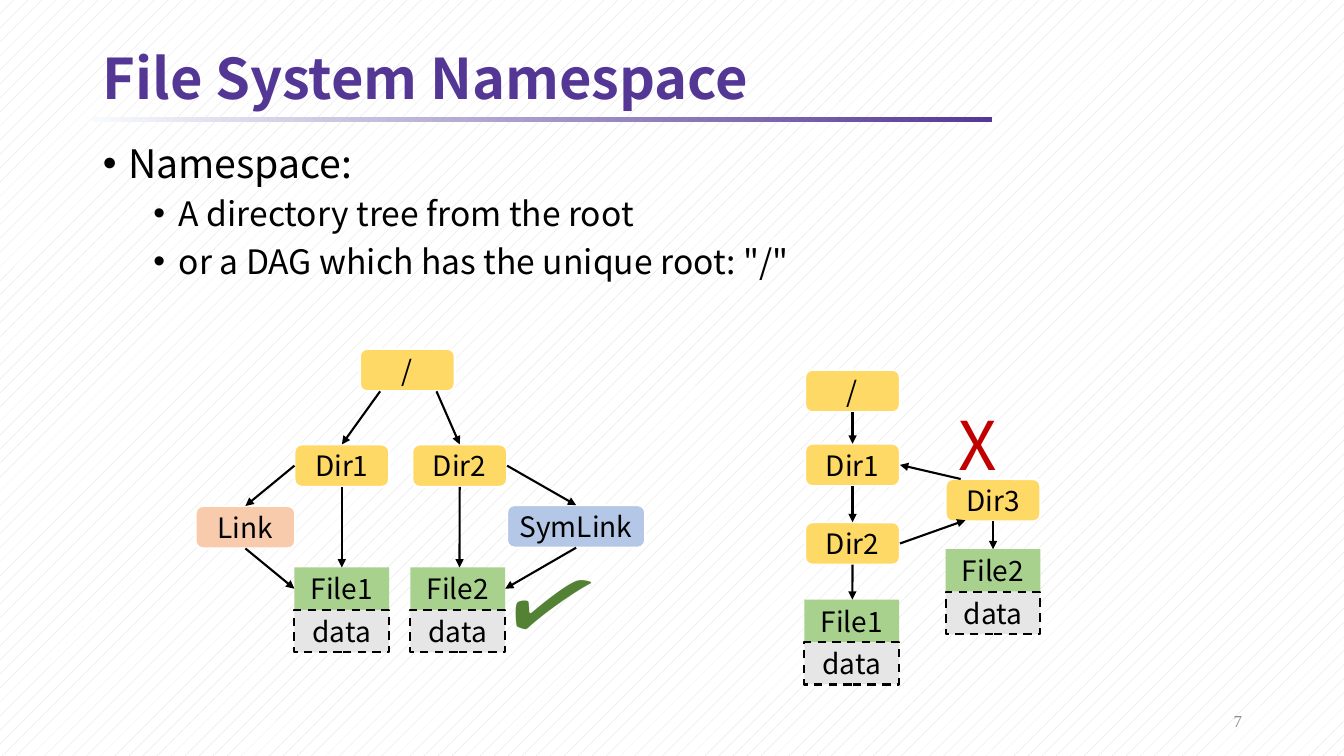
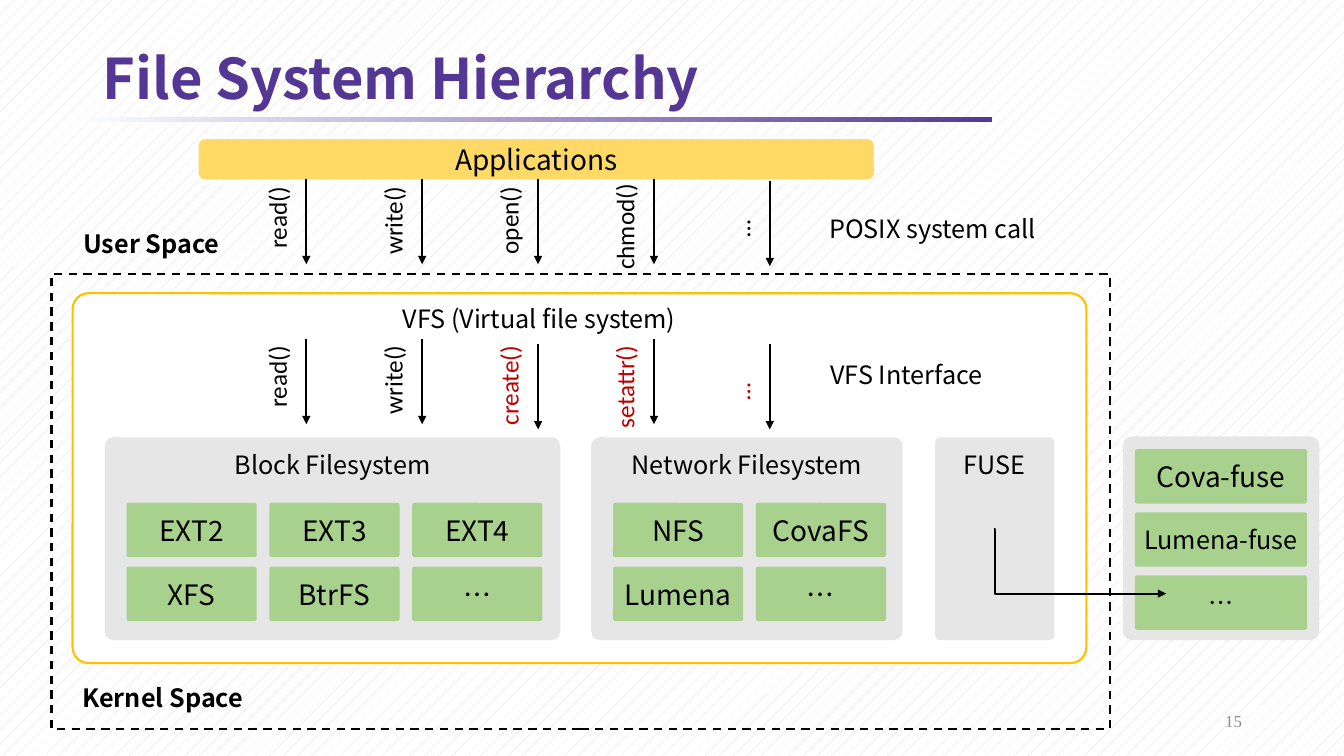
from dataclasses import dataclass
from typing import NamedTuple

from lxml.etree import SubElement
from pptx import Presentation
from pptx.dml.color import RGBColor
from pptx.enum.dml import MSO_LINE, MSO_PATTERN
from pptx.enum.shapes import MSO_CONNECTOR as LINK, MSO_SHAPE as SHAPE
from pptx.enum.text import MSO_ANCHOR as ANCHOR, MSO_AUTO_SIZE as FIT, PP_ALIGN as ALIGN
from pptx.oxml.ns import qn
from pptx.util import Cm, Pt

COLOURS = {
    "black": "000000", "white": "FFFFFF", "purple": "543795", "mist": "F7FAFD",
    "hatch": "D9D9D9", "number": "8C8C8C", "yellow": "FFD966", "amber": "FFC000",
    "blue": "B4C7E7", "peach": "F8CBAD", "green": "A9D18E", "grey": "E7E6E6",
    "red": "C00000", "check": "548235",
}
SANS, CODE, SERIF = "Noto Sans CJK SC", "Calibri", "Times New Roman"
TOP, LEFT, BOTTOM, RIGHT = range(4)
LINE_WIDTH = Pt(1.5)
PANEL_ROUNDING = 0.043
NODE_WIDTH, NODE_HEIGHT = 2.39, 1.07


class Box(NamedTuple):
    """A place on the page, in centimetres."""
    left: float
    top: float
    width: float
    height: float

    def lengths(self):
        return [Cm(value) for value in self]


class Style(NamedTuple):
    size: float = 18
    colour: str = "black"
    font: str = SANS
    bold: bool = False
    align: ALIGN = ALIGN.LEFT


class Spot(NamedTuple):
    x: float
    y: float


class Joint(NamedTuple):
    node: str
    side: int


class Edge(NamedTuple):
    start: Joint | Spot
    end: Joint | Spot


@dataclass
class Node:
    key: str
    text: str
    left: float
    top: float
    width: float = NODE_WIDTH
    fill: str = "yellow"


@dataclass
class Call:
    text: str
    middle: float
    arrow_top: float
    colour: str = "black"


@dataclass
class Panel:
    box: Box
    title: str
    cells: list[str]
    columns: int = 1
    cell_width: float = 3.28
    inset: Spot = Spot(0.55, 1.65)
    row_pitch: float = 1.61
    sizes: tuple[int, ...] = ()


CENTRED = Style(20, align=ALIGN.CENTER)
TREE_NODES = [
    Node("root", "/", 9.07, 8.79),
    Node("dir1", "Dir1", 7.42, 11.2),
    Node("dir2", "Dir2", 10.39, 11.2),
    Node("symlink", "SymLink", 12.78, 12.73, 3.48, "blue"),
    Node("link", "Link", 4.93, 12.75, 2.51, "peach"),
    Node("cycle root", "/", 20.29, 9.32),
    Node("cycle dir1", "Dir1", 20.29, 11.18),
    Node("cycle dir2", "Dir2", 20.29, 13.16),
    Node("cycle dir3", "Dir3", 23.83, 12.07),
]
FILE_NODES = [
    Node("file1", "File1", 7.42, 14.3, fill="green"),
    Node("file2", "File2", 10.34, 14.3, fill="green"),
    Node("cycle file1", "File1", 20.27, 15.11, fill="green"),
    Node("cycle file2", "File2", 23.83, 13.84, fill="green"),
]
EDGES = [
    Edge(Spot(9.58, 9.86), Joint("dir1", TOP)),
    Edge(Spot(11, 9.86), Joint("dir2", TOP)),
    Edge(Joint("dir1", LEFT), Joint("link", TOP)),
    Edge(Joint("dir1", BOTTOM), Joint("file1", TOP)),
    Edge(Joint("link", BOTTOM), Joint("file1", LEFT)),
    Edge(Joint("dir2", BOTTOM), Spot(11.58, 14.3)),
    Edge(Joint("dir2", RIGHT), Joint("symlink", TOP)),
    Edge(Joint("symlink", BOTTOM), Joint("file2", RIGHT)),
    Edge(Joint("cycle root", BOTTOM), Joint("cycle dir1", TOP)),
    Edge(Joint("cycle dir1", BOTTOM), Joint("cycle dir2", TOP)),
    Edge(Joint("cycle dir2", BOTTOM), Spot(21.48, 15.11)),
    Edge(Joint("cycle dir2", RIGHT), Spot(24.33, 13.11)),
    Edge(Spot(24.21, 12.07), Joint("cycle dir1", RIGHT)),
    Edge(Joint("cycle dir3", BOTTOM), Joint("cycle file2", TOP)),
]
POSIX_CALLS = [
    Call("read()", 5.49, 4.5), Call("write()", 5.56, 4.5), Call("open()", 5.56, 4.5),
    Call("chmod()", 5.72, 4.5), Call("…", 5.77, 4.55),
]
VFS_CALLS = [
    Call("read()", 9.5, 8.53), Call("write()", 9.57, 8.53),
    Call("create()", 9.72, 8.66, "red"), Call("setattr()", 9.75, 8.53, "red"),
    Call("…", 9.86, 8.66, "red"),
]
KERNEL_PANELS = [
    Panel(Box(2.64, 11.02, 11.48, 5.11), "Block Filesystem",
          ["EXT2", "EXT3", "EXT4", "XFS", "BtrFS", "…"], columns=3),
    Panel(Box(14.9, 11.02, 7.85, 5.11), "Network Filesystem",
          ["NFS", "CovaFS", "Lumena", "…"], columns=2),
    Panel(Box(23.57, 11.02, 3, 5.11), "FUSE", []),
]
USER_PANEL = Panel(Box(28.3, 11, 4.95, 5.13), "", ["Cova-fuse", "Lumena-fuse", "…"],
                   cell_width=4.34, inset=Spot(0.3, 0.32), row_pitch=1.59, sizes=(20, 18, 18))


def rgb(name: str) -> RGBColor:
    return RGBColor.from_string(COLOURS[name])


def write(para, text: str, style: Style) -> None:
    para.alignment = style.align
    span = para.add_run()
    span.text = text
    span.font.name, span.font.size, span.font.bold = style.font, Pt(style.size), style.bold
    span.font.color.rgb = rgb(style.colour)


def add_label(page, box: Box, text: str, style: Style = Style(), wrap=False, turn=0.0):
    label = page.shapes.add_textbox(*box.lengths())
    label.text_frame.word_wrap = wrap
    label.rotation = turn
    write(label.text_frame.paragraphs[0], text, style)
    return label


def add_block(page, box: Box, fill: str = "", line: str = "", text: str = "", rounding=0.0,
              dashed=False, style: Style = CENTRED):
    """Draw a rectangle, rounded on request; an empty fill or line is left out."""
    kind = SHAPE.ROUNDED_RECTANGLE if rounding else SHAPE.RECTANGLE
    block = page.shapes.add_shape(kind, *box.lengths())
    block.shadow.inherit = False
    if rounding:
        block.adjustments[0] = rounding
    if fill:
        block.fill.solid()
        block.fill.fore_color.rgb = rgb(fill)
    else:
        block.fill.background()
    if line:
        block.line.color.rgb = rgb(line)
        block.line.width = LINE_WIDTH
        if dashed:
            block.line.dash_style = MSO_LINE.DASH
    else:
        block.line.fill.background()
    if text:
        frame = block.text_frame
        frame.vertical_anchor = ANCHOR.MIDDLE
        frame.margin_left = frame.margin_right = 0
        write(frame.paragraphs[0], text, style)
    return block


def add_arrow(page, start: Spot, end: Spot, kind=LINK.STRAIGHT):
    arrow = page.shapes.add_connector(kind, *(Cm(value) for value in (*start, *end)))
    arrow.line.color.rgb = rgb("black")
    arrow.line.width = LINE_WIDTH
    properties = arrow.element.spPr
    SubElement(properties.find(qn("a:ln")), qn("a:tailEnd"), type="triangle")
    SubElement(properties, qn("a:effectLst"))
    return arrow


def add_edge(page, edge: Edge, blocks: dict) -> None:
    start, end = (Spot(0, 0) if isinstance(tip, Joint) else tip for tip in edge)
    arrow = add_arrow(page, start, end)
    for tip, connect in zip(edge, (arrow.begin_connect, arrow.end_connect)):
        if isinstance(tip, Joint):
            connect(blocks[tip.node], tip.side)


def place(holder, box: Box) -> None:
    holder.left, holder.top, holder.width, holder.height = box.lengths()


def start_page(deck, layout: int, title: str, number: int):
    """Add a page with the title, the band under it and the page number."""
    page = deck.slides.add_slide(deck.slide_layouts[layout])
    heading = page.shapes.title
    place(heading, Box(2.34, 1.09, 29.21, 1.91))
    heading.text_frame.vertical_anchor = ANCHOR.MIDDLE
    heading.text_frame.auto_size = FIT.NONE
    para = heading.text_frame.paragraphs[0]
    para.line_spacing = 0.9
    write(para, title, Style(40, "purple", bold=True))

    band = add_block(page, Box(2.34, 2.95, 22.66, 0.13), "purple")
    band.fill.gradient()
    band.fill.gradient_angle = 0
    for stop, colour in zip(band.fill.gradient_stops, ("mist", "purple")):
        stop.color.rgb = rgb(colour)

    footer = add_label(page, Box(23.93, 17.65, 7.62, 1.02), str(number),
                       Style(12, "number", SERIF, align=ALIGN.RIGHT), wrap=True)
    footer.text_frame.vertical_anchor = ANCHOR.MIDDLE
    return page


def add_bullet(para, text: str, level: int) -> None:
    para.level = level
    para.line_spacing = 1.0
    para.space_before = Pt(5 if level else 10)
    write(para, text, Style(24 if level else 28))
    properties = para._p.get_or_add_pPr()
    properties.set("marL", str(Cm(0.64 + 1.27 * level)))
    properties.set("indent", str(Cm(-0.64)))
    SubElement(properties, qn("a:buFont"), typeface="Arial")
    SubElement(properties, qn("a:buChar"), char="•")


def build_namespace(deck) -> None:
    page = start_page(deck, 1, "File System Namespace", 7)
    body = page.placeholders[1]
    place(body, Box(2.34, 3.38, 29.21, 13.79))
    frame = body.text_frame
    frame.auto_size = FIT.NONE
    bullets = [("Namespace:", 0), ("A directory tree from the root", 1),
               ('or a DAG which has the unique root: "/"', 1)]
    for index, (text, level) in enumerate(bullets):
        add_bullet(frame.add_paragraph() if index else frame.paragraphs[0], text, level)

    blocks = {}
    for node in TREE_NODES:
        box = Box(node.left, node.top, node.width, NODE_HEIGHT)
        blocks[node.key] = add_block(page, box, node.fill, "white", node.text, rounding=0.17)
    for node in FILE_NODES:
        box = Box(node.left, node.top, node.width, NODE_HEIGHT)
        blocks[node.key] = add_block(page, box, node.fill, text=node.text)
        add_block(page, box._replace(top=node.top + NODE_HEIGHT), "grey", "black", "data",
                  dashed=True)
    for edge in EDGES:
        add_edge(page, edge, blocks)
    add_label(page, Box(12.8, 13.56, 2.26, 3.07), "✓", Style(66, "check", SERIF), turn=18.9)
    add_label(page, Box(23.9, 10.03, 2.39, 2.31), "X", Style(48, "red"), wrap=True)


def add_calls(page, calls: list[Call]) -> None:
    """Draw a row of down arrows, each with an upright call name on its left."""
    for index, call in enumerate(calls):
        x = 7.72 + 2.92 * index
        add_arrow(page, Spot(x, call.arrow_top), Spot(x, call.arrow_top + 2.16))
        width, height = 2.7, 1.02
        box = Box(x - 0.74 - width / 2, call.middle - height / 2, width, height)
        add_label(page, box, call.text, Style(18, call.colour, CODE, align=ALIGN.CENTER),
                  wrap=True, turn=270)


def add_panel(page, panel: Panel) -> None:
    box = panel.box
    add_block(page, box, "grey", rounding=PANEL_ROUNDING)
    if panel.title:
        add_label(page, Box(box.left, box.top + 0.18, box.width, 1.02), panel.title,
                  Style(align=ALIGN.CENTER), wrap=True)
    for index, text in enumerate(panel.cells):
        row, column = divmod(index, panel.columns)
        cell = Box(box.left + panel.inset.x + 3.6 * column,
                   box.top + panel.inset.y + panel.row_pitch * row, panel.cell_width, 1.37)
        size = panel.sizes[index] if panel.sizes else 20
        add_block(page, cell, "green", text=text, rounding=PANEL_ROUNDING,
                  style=CENTRED._replace(size=size))


def build_hierarchy(deck) -> None:
    page = start_page(deck, 5, "File System Hierarchy", 15)
    add_block(page, Box(4.98, 3.48, 17.07, 1.07), "yellow", "white", "Applications", rounding=0.17)
    add_calls(page, POSIX_CALLS)
    add_block(page, Box(1.83, 7.39, 25.55, 9.32), "white", "amber", rounding=PANEL_ROUNDING)
    add_label(page, Box(9.75, 7.52, 7.67, 1.02), "VFS (Virtual file system)",
              Style(align=ALIGN.CENTER))
    add_calls(page, VFS_CALLS)
    add_label(page, Box(20.65, 5.26, 5.92, 1.02), "POSIX system call")
    add_label(page, Box(20.68, 8.94, 4.55, 1.02), "VFS Interface")
    add_label(page, Box(1.85, 5.64, 4.04, 1.02), "User Space", Style(bold=True))
    add_label(page, Box(1.83, 17.07, 4.6, 1.02), "Kernel Space", Style(bold=True))
    for panel in KERNEL_PANELS:
        add_panel(page, panel)
    add_block(page, Box(1.3, 6.91, 26.67, 11.46), line="black", dashed=True)
    add_panel(page, USER_PANEL)
    elbow = add_arrow(page, Spot(25.04, 13.34), Spot(29.39, 14.96), LINK.ELBOW)
    guides = elbow.element.spPr.find(qn("a:prstGeom")).find(qn("a:avLst"))
    SubElement(guides, qn("a:gd"), name="adj1", fmla="val 800")


def main() -> None:
    deck = Presentation()
    deck.slide_width, deck.slide_height = Cm(33.87), Cm(19.05)
    backdrop = deck.slide_master.background.fill
    backdrop.patterned()
    backdrop.pattern = MSO_PATTERN.PERCENT_5
    backdrop.fore_color.rgb = rgb("hatch")
    backdrop.back_color.rgb = rgb("white")
    build_namespace(deck)
    build_hierarchy(deck)
    deck.save("out.pptx")


if __name__ == "__main__":
    main()
